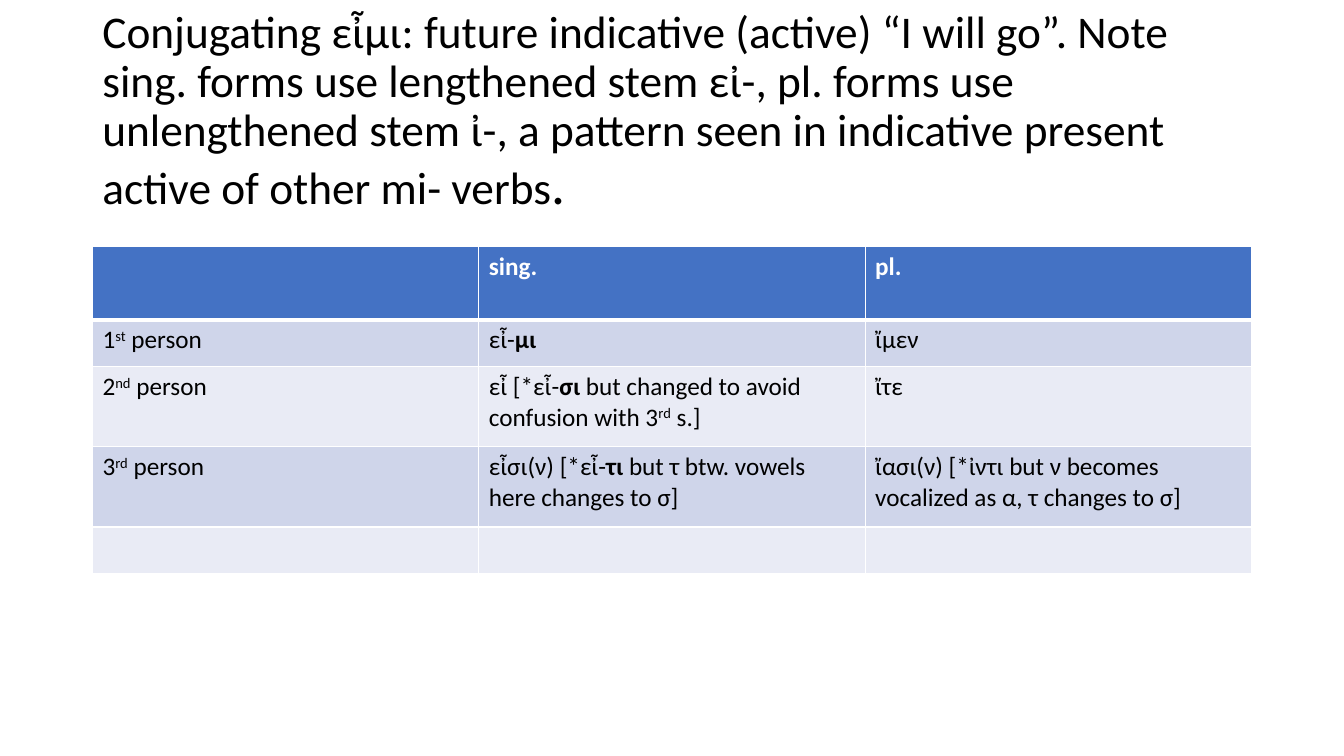
from dataclasses import dataclass
from lxml import etree
from pptx import Presentation
from pptx.dml.color import RGBColor
from pptx.enum.text import MSO_ANCHOR
from pptx.oxml.ns import qn
from pptx.util import Cm, Pt

MIDDLE = MSO_ANCHOR.MIDDLE


@dataclass
class Theme:
    font: str = "Calibri"
    ink: str = "000000"
    white: str = "FFFFFF"
    head: str = "4472C4"
    bands: tuple = ("CFD5EA", "E9EBF5")
    title: float = 32.4
    stop: float = 39.6
    body: float = 18


theme = Theme()


def add_run(para, text, size, color, bold=False, raised=False):
    run = para.add_run()
    run.text = text
    run.font.name = theme.font
    run.font.size = Pt(size)
    run.font.bold = bold
    run.font.color.rgb = RGBColor.from_string(color)
    if raised:
        run._r.get_or_add_rPr().set("baseline", "30000")


def add_edge(cell, place, side, width):
    line = etree.Element(qn(f"a:ln{side}"), w=str(Pt(width)))
    fill = etree.SubElement(line, qn("a:solidFill"))
    etree.SubElement(fill, qn("a:srgbClr"), val=theme.white)
    cell._tc.get_or_add_tcPr().insert(place, line)


deck = Presentation()
deck.slide_width = Cm(33.87)
deck.slide_height = Cm(19.05)
slide = deck.slides.add_slide(deck.slide_layouts[6])

left, width = Cm(2.33), Cm(29.21)
frame = slide.shapes.add_textbox(left, Cm(1.01), width, Cm(3.68)).text_frame
frame.word_wrap = True
frame.vertical_anchor = MIDDLE
para = frame.paragraphs[0]
para.line_spacing = 0.9
add_run(
    para,
    "Conjugating εἶμι: future indicative (active) “I will go”. Note sing. forms "
    "use lengthened stem εἰ-, pl. forms use unlengthened stem ἰ-, a pattern seen "
    "in indicative present active of other mi- verbs",
    theme.title,
    theme.ink,
)
add_run(para, ".", theme.stop, theme.ink)

PLAIN, BOLD, RAISED = "plain", "bold", "raised"
rows = [
    [[], [("sing.", BOLD)], [("pl.", BOLD)]],
    [
        [("1", PLAIN), ("st", RAISED), (" person", PLAIN)],
        [("εἶ-", PLAIN), ("μι", BOLD)],
        [("ἴμεν", PLAIN)],
    ],
    [
        [("2", PLAIN), ("nd", RAISED), (" person", PLAIN)],
        [
            ("εἶ [*εἶ-", PLAIN),
            ("σι", BOLD),
            (" but changed to avoid confusion with 3", PLAIN),
            ("rd", RAISED),
            (" s.]", PLAIN),
        ],
        [("ἴτε", PLAIN)],
    ],
    [
        [("3", PLAIN), ("rd", RAISED), (" person", PLAIN)],
        [
            ("εἶσι(ν) [*εἶ-", PLAIN),
            ("τι", BOLD),
            (" but τ btw. vowels here changes to σ]", PLAIN),
        ],
        [("ἴασι(ν) [*ἰντι but ν becomes vocalized as α, τ changes to σ]", PLAIN)],
    ],
    [[], [], []],
]
heights = [Cm(1.85), Cm(1.18), Cm(2.02), Cm(2.02), Cm(1.18)]

table = slide.shapes.add_table(
    len(rows), len(rows[0]), left, Cm(6.21), width, sum(heights)
).table
for r, (row, height) in enumerate(zip(rows, heights)):
    table.rows[r].height = height
    back = theme.bands[(r - 1) % 2] if r else theme.head
    color = theme.ink if r else theme.white
    edges = {"L": 1, "R": 1, "T": 3 if r == 1 else 1, "B": 1 if r else 3}
    for c, parts in enumerate(row):
        cell = table.cell(r, c)
        cell.fill.solid()
        cell.fill.fore_color.rgb = RGBColor.from_string(back)
        for place, (side, weight) in enumerate(edges.items()):
            add_edge(cell, place, side, weight)
        para = cell.text_frame.paragraphs[0]
        for text, style in parts:
            add_run(para, text, theme.body, color, style == BOLD, style == RAISED)

deck.save("out.pptx")
